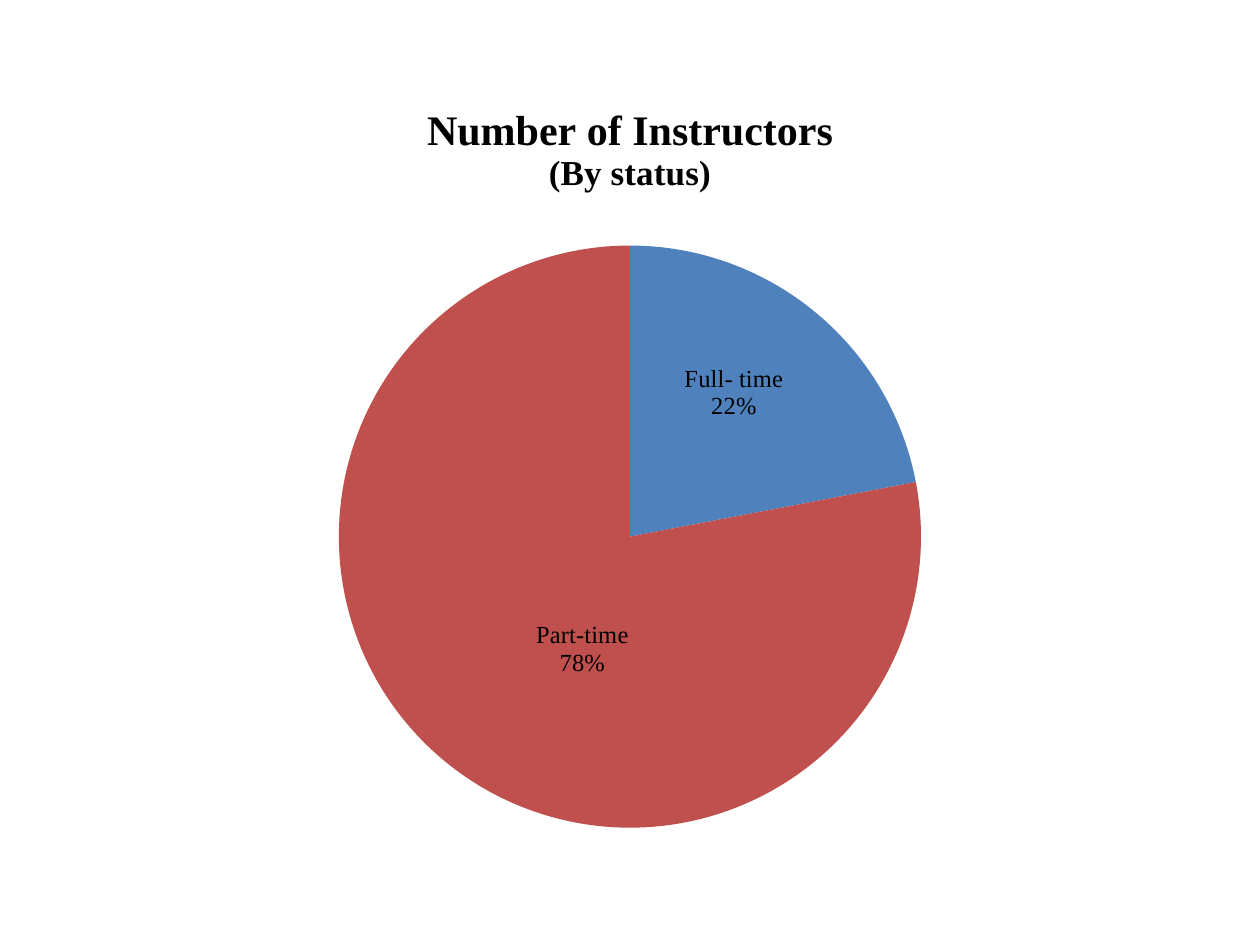
from lxml import etree
from pptx import Presentation
from pptx.chart.data import CategoryChartData
from pptx.dml.color import RGBColor
from pptx.enum.chart import XL_CHART_TYPE, XL_LABEL_POSITION
from pptx.enum.text import PP_ALIGN
from pptx.oxml.ns import qn
from pptx.util import Inches, Pt

PIE = XL_CHART_TYPE.PIE
LABEL_CENTER = XL_LABEL_POSITION.CENTER
ALIGN_CENTER = PP_ALIGN.CENTER

COLORS = {"text": "000000", "full": "4F81BD", "part": "C0504D"}
HEADING_FONT = "Times New Roman"
BODY_FONT = "Calibri"


def format_font(font, size, name, color="text", bold=False):
    font.size = Pt(size)
    font.name = name
    font.bold = bold
    font.color.rgb = RGBColor.from_string(COLORS[color])


def add_text(p, text, align=ALIGN_CENTER, **style):
    p.alignment = align
    r = p.add_run()
    r.text = text
    format_font(r.font, **style)


def make_layout(**values):
    layout = etree.Element(qn("c:layout"))
    manual = etree.SubElement(layout, qn("c:manualLayout"))
    for tag, value in values.items():
        etree.SubElement(manual, qn(f"c:{tag}")).set("val", str(value))
    return layout


class SlideBuilder:
    def __init__(self, slide):
        self.s = slide
        self.title_style = {"name": HEADING_FONT, "bold": True}
        self.label_style = {"name": HEADING_FONT, "size": 14}

    def pie(self, box, slices, plot_box):
        data = CategoryChartData()
        data.categories = [name for name, *_ in slices]
        data.add_series("Series 1", [value for _, value, *_ in slices])
        frame = self.s.shapes.add_chart(PIE, *map(Inches, box), data)
        chart = frame.chart
        format_font(chart.font, 10, BODY_FONT)
        chart.has_legend = False
        plot = chart.plots[0]
        plot.vary_by_categories = True
        self.place_plot(plot, plot_box)
        self.slices(plot.series[0], slices)
        return chart

    def place_plot(self, plot, plot_box):
        area = plot._element.getparent()
        for old in area.findall(qn("c:layout")):
            area.remove(old)
        x, y, w, h = plot_box
        area.insert(0, make_layout(layoutTarget="inner", xMode="edge",
                                   yMode="edge", x=x, y=y, w=w, h=h))

    def slices(self, series, slices):
        labels = series.data_labels
        format_font(labels.font, **self.label_style)
        for i, (_, _, color, offset) in enumerate(slices):
            point = series.points[i]
            point.format.fill.solid()
            point.format.fill.fore_color.rgb = RGBColor.from_string(COLORS[color])
            point.format.line.fill.background()
            label = point.data_label
            format_font(label.font, **self.label_style)
            label.position = LABEL_CENTER
        root = series._element
        for (*_, offset), node in zip(slices, root.iter(qn("c:dLbl"))):
            node.find(qn("c:idx")).addnext(make_layout(x=offset[0], y=offset[1]))
        for node in root.iter(qn("c:dLbls"), qn("c:dLbl")):
            for tag, shown in (("Val", 0), ("CatName", 1), ("Percent", 1)):
                node.find(qn(f"c:show{tag}")).set("val", str(shown))
            separator = etree.Element(qn("c:separator"))
            separator.text = "\n"
            node.find(qn("c:showBubbleSize")).addnext(separator)

    def title(self, chart, lines):
        chart.has_title = True
        chart.chart_title.include_in_layout = False
        tf = chart.chart_title.text_frame
        for i, (text, size) in enumerate(lines):
            p = tf.add_paragraph() if i else tf.paragraphs[0]
            add_text(p, text, size=size, **self.title_style)


def main():
    prs = Presentation()
    prs.slide_width, prs.slide_height = Inches(10), Inches(7.5)
    builder = SlideBuilder(prs.slides.add_slide(prs.slide_layouts[6]))
    chart = builder.pie(
        box=(0.5, 0.62, 9, 6.33),
        slices=[("Full- time", 22, "full", (0.01, -0.04)),
                ("Part-time", 78, "part", (0.04, 0))],
        plot_box=(0.24, 0.21, 0.52, 0.73),
    )
    builder.title(chart, [("Number of Instructors", 24), ("(By status)", 20)])
    prs.save("out.pptx")


if __name__ == "__main__":
    main()
